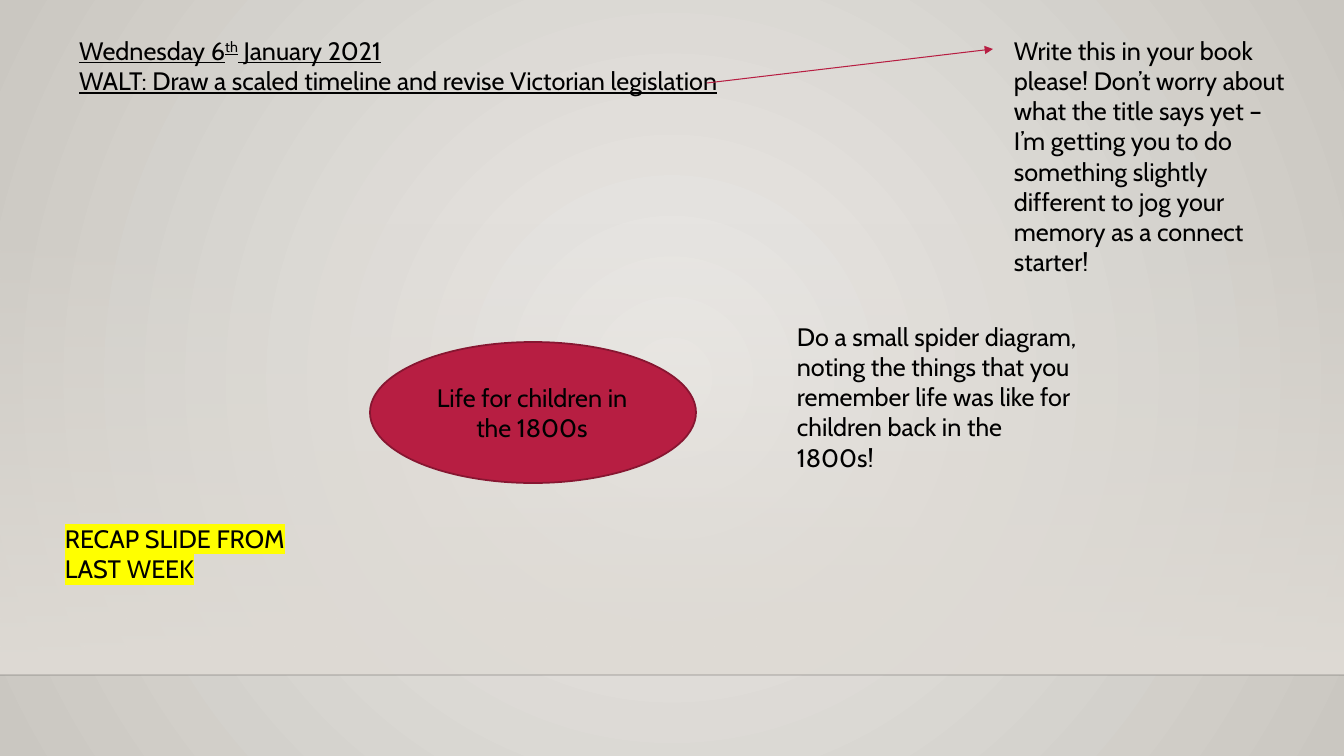
import pptx
import pptx.util
import pptx.dml.color
import pptx.enum.shapes
import pptx.enum.text
import pptx.oxml.ns
from lxml import etree

SCALE = 12192000 / 1344
COLOURS = {
    "glow": "ECEAE7",
    "edge": "CAC7C1",
    "wall": "DFDBD5",
    "floor": "000001",
    "ink": "000000",
    "red": "B71E42",
    "dark_red": "871631",
    "marker": "FFFF00",
}


def px(length):
    return pptx.util.Emu(round(length * SCALE))


def colour(name):
    return pptx.dml.color.RGBColor.from_string(COLOURS[name])


def add_node(parent, tag, **attributes):
    return etree.SubElement(parent, pptx.oxml.ns.qn(tag), **attributes)


def set_opacity(fill_node, percent):
    add_node(fill_node, "a:alpha", val=str(percent * 1000))


class Slide:
    font = "Cabin"
    size = 18

    def __init__(self, deck):
        self.page = deck.slides.add_slide(deck.slide_layouts[5])

    def background(self, inner, outer):
        fill = self.page.background.fill
        fill.gradient()
        for stop, name in zip(fill.gradient_stops, (inner, outer)):
            stop.color.rgb = colour(name)
        gradient = self.page.element.find(".//" + pptx.oxml.ns.qn("a:gradFill"))
        gradient.remove(gradient.find(pptx.oxml.ns.qn("a:lin")))
        radial = add_node(gradient, "a:path", path="circle")
        add_node(radial, "a:fillToRect", l="50000", t="50000", r="50000", b="50000")

    def shape(self, kind, left, top, width, height):
        shape = self.page.shapes.add_shape(kind, px(left), px(top), px(width), px(height))
        shape.shadow.inherit = False
        return shape

    def fading_panel(self, left, top, width, height, name):
        panel = self.shape(pptx.enum.shapes.MSO_SHAPE.RECTANGLE, left, top, width, height)
        panel.line.fill.background()
        panel.fill.gradient()
        panel.fill.gradient_angle = 270
        for stop in panel.fill.gradient_stops:
            stop.color.rgb = colour(name)
        first_stop = panel.element.find(".//" + pptx.oxml.ns.qn("a:srgbClr"))
        set_opacity(first_stop, 0)

    def ellipse(self, left, top, width, height, fill, outline):
        oval = self.shape(pptx.enum.shapes.MSO_SHAPE.OVAL, left, top, width, height)
        oval.fill.solid()
        oval.fill.fore_color.rgb = colour(fill)
        oval.line.color.rgb = colour(outline)
        oval.line.width = pptx.util.Pt(1.25)

    def line(self, start, end, name, width, opacity=100, arrow=False):
        line = self.page.shapes.add_connector(
            pptx.enum.shapes.MSO_CONNECTOR.STRAIGHT, *map(px, start + end))
        line.line.color.rgb = colour(name)
        line.line.width = pptx.util.Pt(width)
        if opacity < 100:
            set_opacity(line.element.find(".//" + pptx.oxml.ns.qn("a:srgbClr")), opacity)
        if arrow:
            add_node(line.line._get_or_add_ln(), "a:tailEnd", type="triangle")
        add_node(line.element.spPr, "a:effectLst")

    def format_text(self, box, align="LEFT"):
        frame = box.text_frame
        frame.word_wrap = True
        frame.auto_size = pptx.enum.text.MSO_AUTO_SIZE.SHAPE_TO_FIT_TEXT
        frame.vertical_anchor = pptx.enum.text.MSO_ANCHOR.TOP
        para = frame.paragraphs[0]
        para.alignment = getattr(pptx.enum.text.PP_ALIGN, align)
        para.font.name = self.font
        para.font.size = pptx.util.Pt(self.size)
        para.font.color.rgb = colour("ink")
        return para

    def title(self, left, top, width, height, day, ordinal, month, aim):
        box = self.page.shapes.title
        box.left, box.top, box.width, box.height = map(px, (left, top, width, height))
        para = self.format_text(box)
        para.font.underline = True
        para.add_run().text = day
        raised = para.add_run()
        raised.text = ordinal
        raised.font._element.set("baseline", "30000")
        para.add_run().text = month
        para.add_line_break()
        para.add_run().text = aim

    def text(self, left, top, width, height, words, align="LEFT", highlight=None):
        box = self.page.shapes.add_textbox(px(left), px(top), px(width), px(height))
        para = self.format_text(box, align)
        span = para.add_run()
        span.text = words
        if highlight:
            marker = add_node(span.font._element, "a:highlight")
            add_node(marker, "a:srgbClr", val=COLOURS[highlight])


def main():
    deck = pptx.Presentation()
    deck.slide_width, deck.slide_height = px(1344), px(756)
    slide = Slide(deck)
    slide.background("glow", "edge")
    slide.fading_panel(0, 223, 1344, 452, "wall")
    slide.line((0, 675), (1344, 675), "floor", 1, opacity=20)
    slide.title(69, 30, 838, 72, "Wednesday 6", "th", " January 2021",
                "WALT: Draw a scaled timeline and revise Victorian legislation")
    slide.line((707, 83), (993, 49), "red", 0.75, arrow=True)
    slide.text(1004, 30, 301, 224,
               "Write this in your book please! Don’t worry about what the title says yet – "
               "I’m getting you to do something slightly different to jog your memory "
               "as a connect starter!")
    slide.ellipse(370, 342, 326, 141, "red", "dark_red")
    slide.text(414, 377, 236, 72, "Life for children in the 1800s", align="CENTER")
    slide.text(787, 316, 303, 132,
               "Do a small spider diagram, noting the things that you remember life was like "
               "for children back in the 1800s!")
    slide.text(55, 518, 300, 72, "RECAP SLIDE FROM LAST WEEK", highlight="marker")
    deck.save("out.pptx")


if __name__ == "__main__":
    main()
